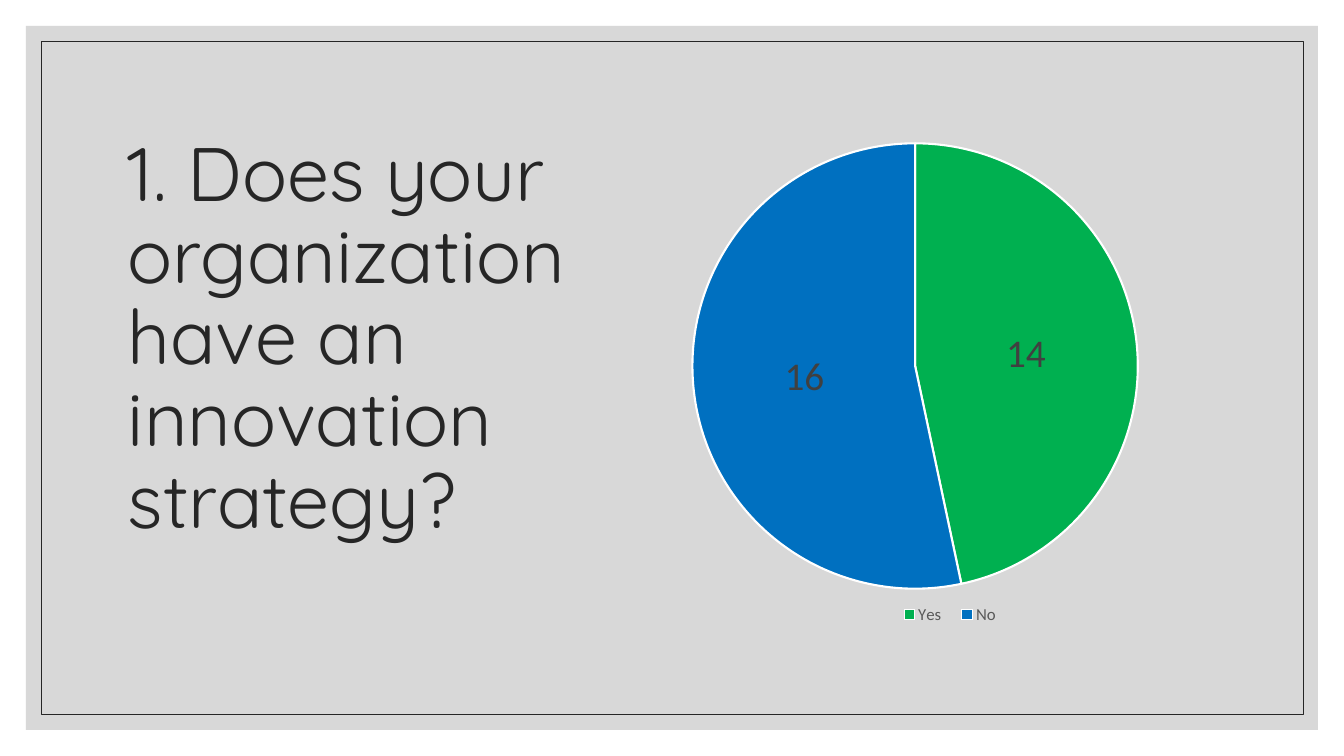
import dataclasses

import lxml.etree
import pptx
import pptx.chart.data
import pptx.dml.color
import pptx.enum.chart
import pptx.enum.shapes
import pptx.enum.text
import pptx.oxml
import pptx.oxml.ns
import pptx.util

EMU_PER_PX = 914400 / 100.8


@dataclasses.dataclass(frozen=True)
class Theme:
    """Colours, fonts and type sizes of the slide."""
    panel: str = "BFBFBF"
    panel_opacity: int = 60
    ink: str = "262626"
    label: str = "404040"
    legend: str = "595959"
    border: str = "FFFFFF"
    slices: tuple = ("00B050", "0070C0")
    heading_font: str = "Quicksand"
    body_font: str = "Calibri"
    heading_size: int = 54
    label_size: int = 28
    legend_size: int = 12


THEME = Theme()


def px(length):
    """Turn pixels into EMU."""
    return pptx.util.Emu(round(length * EMU_PER_PX))


def rgb(colour):
    """Turn a hex string into a colour."""
    return pptx.dml.color.RGBColor.from_string(colour)


def apply_format(target, values):
    """Set each attribute named in a dict."""
    for name, value in values.items():
        setattr(target, name, value)


def style_font(font, name, size, colour):
    """Give a font its name, size and colour."""
    apply_format(font, {"name": name, "size": pptx.util.Pt(size)})
    font.color.rgb = rgb(colour)


def add_rectangle(page, bounds):
    """Add a rectangle without fill, line or shadow."""
    rectangle = page.shapes.add_shape(
        pptx.enum.shapes.MSO_SHAPE.RECTANGLE, *map(px, bounds))
    rectangle.shadow.inherit = False
    rectangle.fill.background()
    rectangle.line.fill.background()
    return rectangle


def add_panel(page, bounds):
    """Add the translucent grey panel."""
    panel = add_rectangle(page, bounds)
    panel.fill.solid()
    panel.fill.fore_color.rgb = rgb(THEME.panel)
    colour = panel._element.spPr.find(".//" + pptx.oxml.ns.qn("a:srgbClr"))
    alpha = lxml.etree.SubElement(colour, pptx.oxml.ns.qn("a:alpha"))
    alpha.set("val", str(THEME.panel_opacity * 1000))


def add_frame(page, bounds):
    """Add the thin outline inside the panel."""
    frame = add_rectangle(page, bounds)
    frame.line.color.rgb = rgb(THEME.ink)
    frame.line.width = pptx.util.Pt(0.5)


def add_heading(page, bounds, text):
    """Add the question as a large wrapped heading."""
    box = page.shapes.add_textbox(*map(px, bounds))
    apply_format(box.text_frame, {
        "word_wrap": True,
        "vertical_anchor": pptx.enum.text.MSO_ANCHOR.MIDDLE,
    })
    para = box.text_frame.paragraphs[0]
    para.line_spacing = 0.9
    span = para.add_run()
    span.text = text
    style_font(span.font, THEME.heading_font, THEME.heading_size, THEME.ink)


def set_layout(element, values, inner=False):
    """Place a chart part by fractions of the chart area."""
    for old in element.findall(pptx.oxml.ns.qn("c:layout")):
        element.remove(old)
    target = '<c:layoutTarget val="inner"/>' if inner else ""
    modes = "".join(f'<c:{axis}Mode val="edge"/>' for axis in "xy")
    sizes = "".join(f'<c:{key} val="{value}"/>' for key, value in values.items())
    layout = pptx.oxml.parse_xml(
        f'<c:layout {pptx.oxml.ns.nsdecls("c")}><c:manualLayout>'
        f"{target}{modes}{sizes}</c:manualLayout></c:layout>")
    position = element.find(pptx.oxml.ns.qn("c:legendPos"))
    element.insert(0 if position is None else element.index(position) + 1, layout)


def add_pie(page, bounds, answers):
    """Add the pie of answers with value labels and a legend."""
    chart_data = pptx.chart.data.CategoryChartData()
    chart_data.categories = list(answers)
    chart_data.add_series("Series 1", list(answers.values()))
    chart = page.shapes.add_chart(
        pptx.enum.chart.XL_CHART_TYPE.PIE, *map(px, bounds), chart_data).chart
    apply_format(chart, {"has_title": False, "has_legend": True})
    style_font(chart.font, THEME.body_font, THEME.legend_size, THEME.legend)
    apply_format(chart.legend, {
        "position": pptx.enum.chart.XL_LEGEND_POSITION.BOTTOM,
        "include_in_layout": False,
    })
    style_font(chart.legend.font, THEME.body_font, THEME.legend_size, THEME.legend)

    plot = chart.plots[0]
    apply_format(plot, {"vary_by_categories": True, "has_data_labels": True})
    apply_format(plot.data_labels, {
        "show_value": True,
        "show_percentage": False,
        "position": pptx.enum.chart.XL_LABEL_POSITION.CENTER,
    })
    style_font(plot.data_labels.font, THEME.body_font, THEME.label_size, THEME.label)
    for index, colour in enumerate(THEME.slices):
        piece = plot.series[0].points[index].format
        piece.fill.solid()
        piece.fill.fore_color.rgb = rgb(colour)
        piece.line.color.rgb = rgb(THEME.border)
        piece.line.width = pptx.util.Pt(1.5)

    plot_area = chart._chartSpace.chart.plotArea
    set_layout(plot_area, {"x": 0.08, "y": 0.03, "w": 0.77, "h": 0.87}, inner=True)
    set_layout(chart.legend._element, {"x": 0.42, "y": 0.92, "w": 0.21, "h": 0.06})


def main():
    """Build the survey slide and save it."""
    deck = pptx.Presentation()
    apply_format(deck, {"slide_width": px(1344), "slide_height": px(756)})
    page = deck.slides.add_slide(deck.slide_layouts[6])
    add_panel(page, (26, 26, 1292, 704))
    add_frame(page, (41, 41, 1262, 673))
    add_heading(page, (118, 71, 489, 539),
                "1. Does your organization have an innovation strategy?")
    add_pie(page, (645, 128, 581, 512), {"Yes": 14, "No": 16})
    deck.save("out.pptx")


if __name__ == "__main__":
    main()
